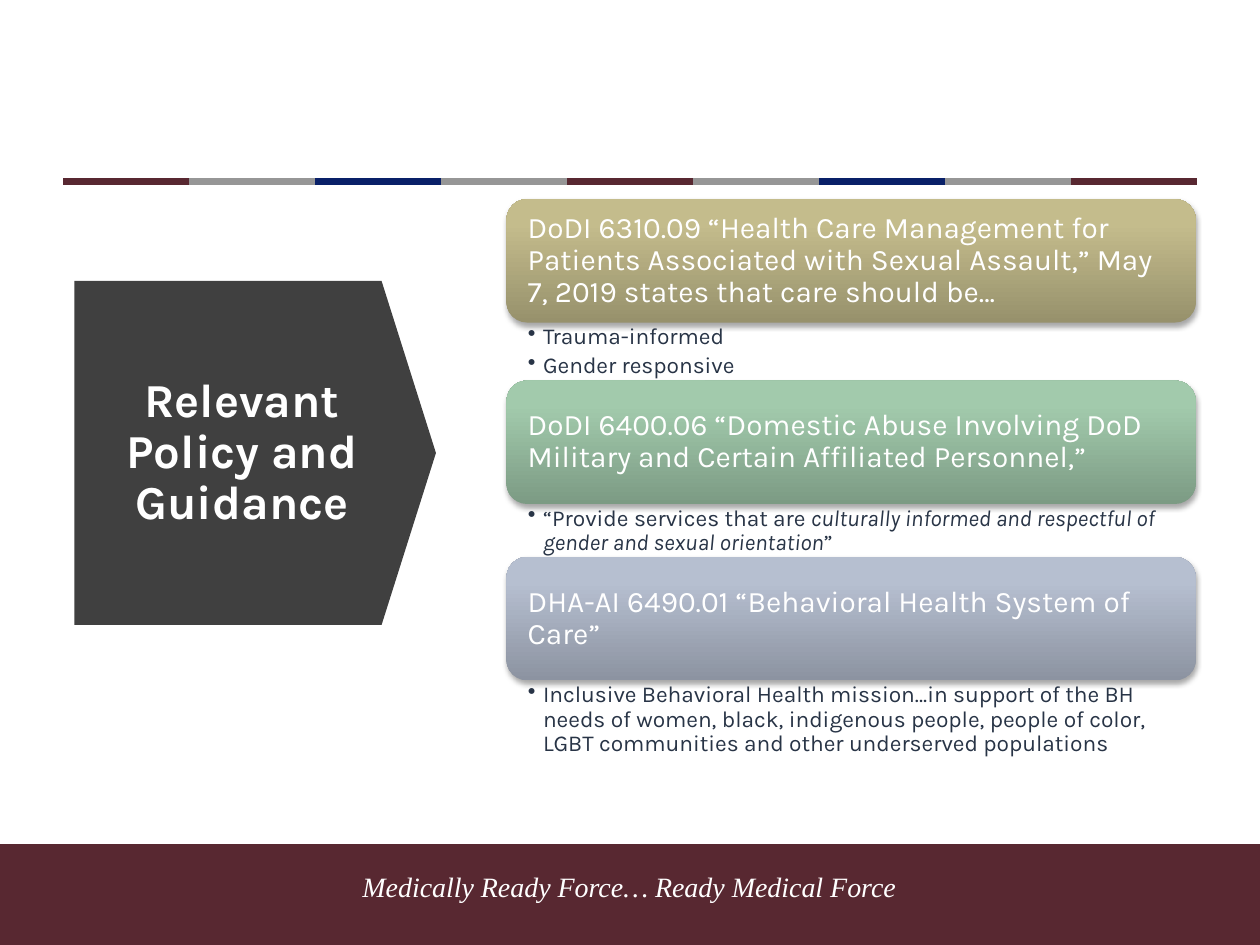
import pptx
import pptx.dml.color
import pptx.enum.shapes
import pptx.enum.text
import pptx.oxml
import pptx.oxml.ns
import pptx.util
from pptx.util import Inches

COLORS = {"maroon": "582831", "gray": "969696", "navy": "092068",
          "arrow": "404040", "white": "FFFFFF", "ink": "283446"}
SHAPES = pptx.enum.shapes.MSO_SHAPE
ANCHORS = pptx.enum.text.MSO_ANCHOR
CENTER = pptx.enum.text.PP_ALIGN.CENTER
NAMESPACE = pptx.oxml.ns.nsdecls("a")
SHADOW = (f'<a:effectLst {NAMESPACE}><a:outerShdw blurRad="39370" dist="22860" dir="5400000" '
          'rotWithShape="0"><a:srgbClr val="000000"><a:alpha val="35000"/></a:srgbClr>'
          '</a:outerShdw></a:effectLst>')


def rgb(value):
    return pptx.dml.color.RGBColor.from_string(value)


def write(box, paragraphs, color, margins, anchor, font, paragraph_format):
    frame = box.text_frame
    frame_format = {"word_wrap": True, "auto_size": pptx.enum.text.MSO_AUTO_SIZE.NONE,
                    "vertical_anchor": anchor}
    for side, margin in zip(("left", "top", "right", "bottom"), margins):
        frame_format[f"margin_{side}"] = Inches(margin)
    for name, value in frame_format.items():
        setattr(frame, name, value)
    for index, spans in enumerate(paragraphs):
        para = frame.add_paragraph() if index else frame.paragraphs[0]
        for name, value in paragraph_format.items():
            setattr(para, name, value)
        for text, italic in spans:
            span = para.add_run()
            span.text = text
            for name, value in {"italic": italic, **font}.items():
                setattr(span.font, name, value)
            span.font.color.rgb = rgb(COLORS[color])


deck = pptx.Presentation()
deck.slide_width, deck.slide_height = Inches(10), Inches(7.5)
page = deck.slides.add_slide(deck.slide_layouts[5])

footer = page.shapes.add_shape(SHAPES.RECTANGLE, 0, Inches(6.7), Inches(10), Inches(0.8))
footer.shadow.inherit = False
footer.fill.solid()
footer.fill.fore_color.rgb = rgb(COLORS["maroon"])
footer.line.fill.background()
motto = page.shapes.add_textbox(Inches(1.29), Inches(6.85), Inches(7.41), Inches(0.57))
write(motto, [[("Medically Ready Force… Ready Medical Force", True)]], "white",
      (0.1, 0.05, 0.1, 0.05), ANCHORS.TOP,
      {"name": "Times New Roman", "size": pptx.util.Pt(16)}, {"alignment": CENTER})

stripe_colors = ["maroon", "gray", "navy", "gray"]
for index in range(9):
    left = 0.5 + index
    stripe = page.shapes.add_connector(pptx.enum.shapes.MSO_CONNECTOR.STRAIGHT,
                                       Inches(left), Inches(1.44), Inches(left + 1), Inches(1.44))
    stripe.line.width = pptx.util.Pt(4)
    stripe.line.color.rgb = rgb(COLORS[stripe_colors[index % 4]])
    stripe.element.spPr.append(pptx.oxml.parse_xml(f"<a:effectLst {NAMESPACE}/>"))

arrow = page.shapes.add_shape(SHAPES.DOWN_ARROW, Inches(0.66), Inches(2.16),
                              Inches(2.73), Inches(2.87))
arrow.rotation = 270
arrow.adjustments[0], arrow.adjustments[1] = 1, 0.158
arrow.shadow.inherit = False
arrow.fill.solid()
arrow.fill.fore_color.rgb = rgb(COLORS["arrow"])
arrow.line.fill.background()

title = page.shapes.title
for name, value in {"left": 0.84, "top": 2.55, "width": 2.16, "height": 2.09}.items():
    setattr(title, name, Inches(value))
write(title, [[("Relevant Policy and Guidance", False)]], "white",
      (0.07, 0.04, 0.07, 0.04), ANCHORS.MIDDLE,
      {"name": "Karla", "size": pptx.util.Pt(27), "bold": True},
      {"alignment": CENTER, "line_spacing": 0.9})
arrow.element.addnext(title.element)

policies = [
    (1.58, 0.46, "97916C", "C4BC8C",
     "DoDI 6310.09 “Health Care Management for Patients Associated with Sexual Assault,” "
     "May 7, 2019 states that care should be…",
     [[("Trauma-informed", False)], [("Gender responsive", False)]]),
    (3.02, 0.42, "7C9B84", "A2CAAC",
     "DoDI 6400.06 “Domestic Abuse Involving DoD Military and Certain Affiliated Personnel,”",
     [[("“Provide services that are ", False),
       ("culturally informed and respectful of gender and sexual orientation", True),
       ("”", False)]]),
    (4.42, 0.61, "8C93A1", "B6BFD0",
     "DHA-AI 6490.01 “Behavioral Health System of Care”",
     [[("Inclusive Behavioral Health mission…in support of the BH needs of women, black, "
        "indigenous people, people of color, LGBT communities and other underserved "
        "populations", False)]]),
]
card_left, card_width, card_height = Inches(4.02), Inches(5.47), Inches(0.98)
for top, list_height, dark, light, heading, points in policies:
    card = page.shapes.add_shape(SHAPES.ROUNDED_RECTANGLE, card_left, Inches(top),
                                 card_width, card_height)
    card.line.fill.background()
    card.fill.gradient()
    card.fill.gradient_angle = 90
    for stop, position, color in zip(card.fill.gradient_stops, (0, 0.8), (dark, light)):
        stop.position = position
        stop.color.rgb = rgb(color)
    card.element.spPr.append(pptx.oxml.parse_xml(SHADOW))
    write(card, [[(heading, False)]], "white", (0.12, 0.07, 0.12, 0.07), ANCHORS.MIDDLE,
          {"name": "Karla", "size": pptx.util.Pt(17)},
          {"alignment": pptx.enum.text.PP_ALIGN.LEFT, "line_spacing": 0.9})

    details = page.shapes.add_textbox(card_left, Inches(top) + card_height,
                                      card_width, Inches(list_height))
    write(details, points, "ink", (0.17, 0.02, 0.13, 0.02), ANCHORS.TOP,
          {"name": "Karla", "size": pptx.util.Pt(13)},
          {"level": 1, "line_spacing": 0.9, "space_after": pptx.util.Pt(2.6)})
    for para in details.text_frame.paragraphs:
        properties = para._p.get_or_add_pPr()
        properties.set("marL", str(Inches(0.12)))
        properties.set("indent", str(Inches(-0.12)))
        properties.append(pptx.oxml.parse_xml(f'<a:buChar {NAMESPACE} char="•"/>'))

deck.save("out.pptx")
